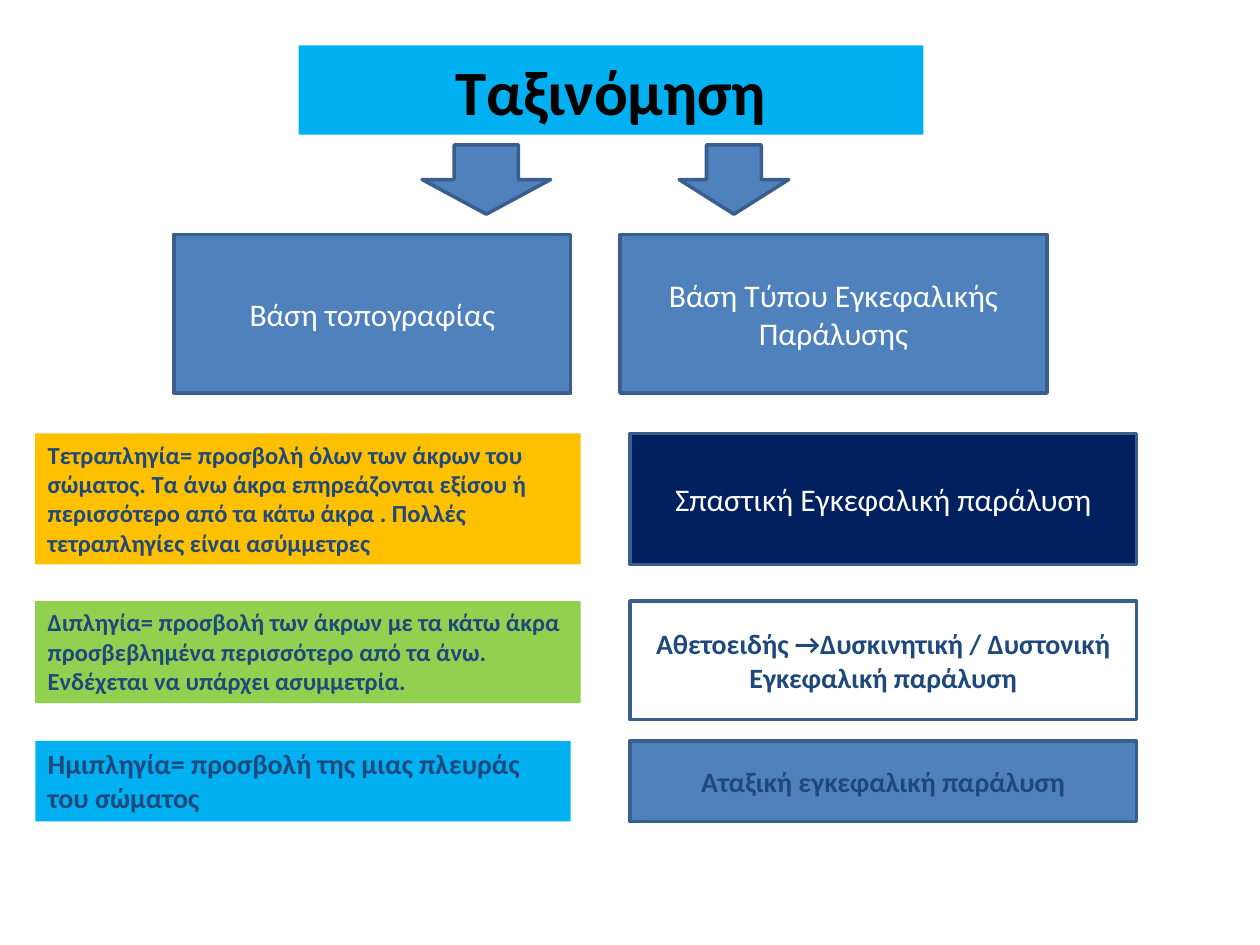
from pptx import Presentation
from pptx.dml.color import RGBColor
from pptx.enum.shapes import MSO_SHAPE
from pptx.enum.text import MSO_ANCHOR, PP_ALIGN
from pptx.util import Inches, Pt

RECTANGLE, DOWN_ARROW = MSO_SHAPE.RECTANGLE, MSO_SHAPE.DOWN_ARROW
TOP, MIDDLE = MSO_ANCHOR.TOP, MSO_ANCHOR.MIDDLE
LEFT, CENTER = PP_ALIGN.LEFT, PP_ALIGN.CENTER

BLACK = RGBColor(0x00, 0x00, 0x00)
WHITE = RGBColor(0xFF, 0xFF, 0xFF)
SKY = RGBColor(0x00, 0xB0, 0xF0)
BLUE = RGBColor(0x4F, 0x81, 0xBD)
EDGE = RGBColor(0x3A, 0x5F, 0x8C)
NAVY = RGBColor(0x00, 0x20, 0x60)
INK = RGBColor(0x1F, 0x49, 0x7D)
AMBER = RGBColor(0xFF, 0xC0, 0x00)
GREEN = RGBColor(0x92, 0xD0, 0x50)

COLUMNS, ROWS = 100, 75
ARROW_ROW, BASIS_ROW = 11.5, 18.6
DETAIL_ROWS = (34.4, 47.7, 58.8)
TOPOGRAPHY_COLUMN, TYPE_COLUMN, TYPE_WIDTH = 2.8, 50, 40.2


class ClassificationSlide:
    """Draws filled shapes and their text on a 100 by 75 grid."""

    font = "Calibri"

    def __init__(self, deck):
        self.column = deck.slide_width / COLUMNS
        self.row = deck.slide_height / ROWS
        self.slide = deck.slides.add_slide(deck.slide_layouts[6])

    def shape(self, kind, left, top, width, height, fill, edged=True):
        shape = self.slide.shapes.add_shape(
            kind, round(left * self.column), round(top * self.row),
            round(width * self.column), round(height * self.row))
        shape.shadow.inherit = False
        shape.fill.solid()
        shape.fill.fore_color.rgb = fill
        if edged:
            shape.line.color.rgb = EDGE
            shape.line.width = Pt(2)
        else:
            shape.line.fill.background()
        return shape

    def label(self, shape, text, size, color, bold, align=CENTER, anchor=MIDDLE):
        frame = shape.text_frame
        frame.word_wrap = True
        frame.vertical_anchor = anchor
        para = frame.paragraphs[0]
        para.text = text
        para.alignment = align
        para.font.name = self.font
        para.font.size = Pt(size)
        para.font.bold = bold
        para.font.color.rgb = color

    def title(self, text, left, top, width, height):
        box = self.shape(RECTANGLE, left, top, width, height, SKY, edged=False)
        self.label(box, text, 36, BLACK, True)

    def arrow(self, left, width):
        self.shape(DOWN_ARROW, left, ARROW_ROW, width, 5.5, BLUE)

    def basis(self, text, left, width):
        box = self.shape(RECTANGLE, left, BASIS_ROW, width, 12.6, BLUE)
        self.label(box, text, 18, WHITE, False)

    def definition(self, text, top, width, height, fill, size):
        box = self.shape(RECTANGLE, TOPOGRAPHY_COLUMN, top, width, height, fill, edged=False)
        self.label(box, text, size, INK, True, LEFT, TOP)

    def palsy_type(self, text, top, height, fill, size, color, bold):
        box = self.shape(RECTANGLE, TYPE_COLUMN, top, TYPE_WIDTH, height, fill)
        self.label(box, text, size, color, bold)


def main():
    deck = Presentation()
    deck.slide_width, deck.slide_height = Inches(10), Inches(7.5)
    page = ClassificationSlide(deck)

    page.title("Ταξινόμηση", 23.7, 3.6, 49.6, 7.1)
    page.basis("Βάση τοπογραφίας", 13.8, 31.5)
    page.basis("Βάση Τύπου Εγκεφαλικής Παράλυσης", 49.2, 33.9)

    definitions = (
        ("Τετραπληγία= προσβολή όλων των άκρων του σώματος. Τα άνω άκρα "
         "επηρεάζονται εξίσου ή περισσότερο από τα κάτω άκρα . Πολλές "
         "τετραπληγίες είναι ασύμμετρες", 43.3, 10.4, AMBER, 14),
        ("Διπληγία= προσβολή των άκρων με τα κάτω άκρα προσβεβλημένα "
         "περισσότερο από τα άνω. Ενδέχεται να υπάρχει ασυμμετρία.",
         43.3, 8.1, GREEN, 14),
        ("Ημιπληγία= προσβολή της μιας πλευράς του σώματος", 42.5, 6.4, SKY, 16),
    )
    for top, (text, *style) in zip(DETAIL_ROWS, definitions):
        page.definition(text, top, *style)

    palsy_types = (
        ("Σπαστική Εγκεφαλική παράλυση", 10.4, NAVY, 18, WHITE, False),
        ("Αθετοειδής →Δυσκινητική / Δυστονική Εγκεφαλική παράλυση",
         9.4, WHITE, 16, INK, True),
        ("Αταξική εγκεφαλική παράλυση", 6.4, BLUE, 16, INK, True),
    )
    for top, (text, *style) in zip(DETAIL_ROWS, palsy_types):
        page.palsy_type(text, top, *style)

    page.arrow(33.5, 10.2)
    page.arrow(53.9, 8.7)
    deck.save("out.pptx")


if __name__ == "__main__":
    main()
